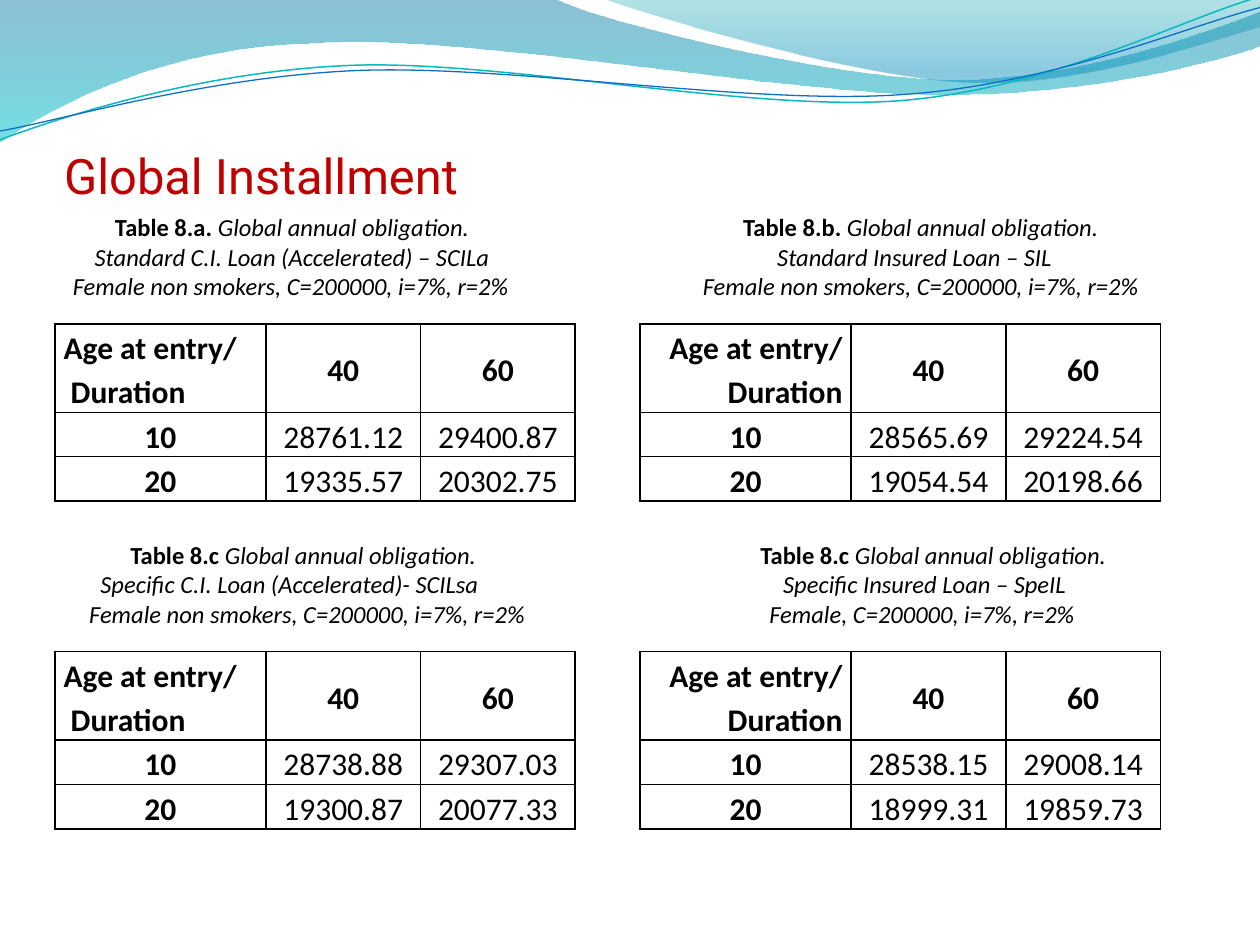
"""Builds the slide of global installment tables."""
import math
import pptx
import pptx.dml.color
import pptx.enum.text
import pptx.oxml
import pptx.oxml.ns
import pptx.util

ALIGN = pptx.enum.text.PP_ALIGN
ANCHOR = pptx.enum.text.MSO_ANCHOR
SPACE = pptx.oxml.ns.nsdecls("a")
BLACK = "000000"

WAVES = [
    ((-0.1, -0.1, 100.2, 11.4), (0, 0),
     [(44, -0.1), (47.6, 1.7, 66.4, 6.3, 75.8, 6.3),
      (85.3, 6.3, 95.8, 2.6, 100, 0.9), (100.1, 3.6),
      (98.3, 4.4, 87, 7.6, 74.6, 7.5), (62.2, 7.5, 38.2, 2.8, 25.7, 3.4),
      (12.9, 3.6, 4.6, 8.3, -0.1, 11.3), (0, 0)],
     [(0, "0074A1", 45), (1, "00C6CF", 55)]),
    ((47.9, -0.1, 52.1, 7), (47.9, -0.1),
     [(50.9, 1.1, 68.2, 6.2, 76.9, 6.5),
      (85.6, 6.9, 96.1, 3.2, 100, 2.1), (100, 0), (47.9, -0.1)],
     [(0, "00A1A9", 30), (0.8, "008BBF", 45)]),
]
LINES = [
    ((-0.2, 2.2, 100.2, 7.1), (0, 11.1),
     [(4.8, 9.3, 15.8, 5.7, 27.7, 5.2), (39.5, 4.7, 59.3, 8.9, 71.3, 8),
      (83.3, 7.1, 93.8, 1.5, 99.8, -0.2)], "0AB8BF", 0.85),
    ((-0.2, 3, 100.3, 5.8), (0, 10.4),
     [(4.7, 9.6, 16.4, 6.1, 28.3, 5.6), (40.3, 5.1, 59.7, 8.4, 71.7, 7.5),
      (83.6, 6.7, 94.1, 2.1, 100, 0.6)], "0F6FC6", 0.75),
]
THEME = "Global annual obligation."
TERMS = "C=200000, i=7%, r=2%"
NOTES = [
    ((3.5, 16.3, 94.5, 8.1), ("Table 8.a.", "Table 8.b."), [
        (23.2, THEME, 73.1, THEME),
        (23.2, "Standard C.I. Loan (Accelerated) – SCILa", 72.6, "Standard Insured Loan – SIL"),
        (23.1, f"Female non smokers, {TERMS}", 73.1, f"Female non smokers, {TERMS}")]),
    ((0, 42.3, 91, 8.1), ("Table 8.c", "Table 8.c"), [
        (24.1, THEME, 74.1, THEME),
        (23, "Specific C.I. Loan (Accelerated)- SCILsa", 73.4, "Specific Insured Loan – SpeIL"),
        (24.4, f"Female non smokers, {TERMS}", 73.2, f"Female, {TERMS}")]),
]
TABLES = [
    (0, 0, [("28761.12", "29400.87"), ("19335.57", "20302.75")]),
    (1, 0, [("28565.69", "29224.54"), ("19054.54", "20198.66")]),
    (1, 1, [("28538.15", "29008.14"), ("18999.31", "19859.73")]),
    (0, 1, [("28738.88", "29307.03"), ("19300.87", "20077.33")]),
]


def paint(code):
    """Return the colour of a hex string."""
    return pptx.dml.color.RGBColor.from_string(code)


class Deck:
    """Holds the style and the current slide on a grid of 100 by 75 squares."""

    face = "Calibri"
    head = "Roboto"

    def __init__(self):
        """Start a deck with one titled slide."""
        self.file = pptx.Presentation()
        self.file.slide_width = pptx.util.Inches(10)
        self.file.slide_height = pptx.util.Inches(7.5)
        self.unit = self.file.slide_width / 100
        self.slide = self.file.slides.add_slide(self.file.slide_layouts[5])

    def span(self, *sizes):
        """Turn grid squares into lengths."""
        return [pptx.util.Emu(round(size * self.unit)) for size in sizes]

    def style(self, para, size, align, bold=None):
        """Set the font and alignment of a paragraph."""
        para.alignment = align
        font = para.font
        font.name, font.size, font.bold = self.face, pptx.util.Pt(size), bold
        font.color.rgb = paint(BLACK)

    def title(self, text):
        """Fill the title placeholder and bring it to the front."""
        box = self.slide.shapes.title
        box.left, box.top, box.width, box.height = self.span(5.1, 8.4, 90, 12.5)
        frame = box.text_frame
        frame.text = text
        frame.vertical_anchor = ANCHOR.BOTTOM
        frame.margin_left, frame.margin_right, frame.margin_bottom = self.span(0, 0, 4.7)
        para = frame.paragraphs[0]
        self.style(para, 27.9, ALIGN.LEFT)
        para.font.name = self.head
        para.font.color.rgb = paint("C00000")
        self.slide.shapes._spTree.append(box._element)

    def curve(self, area, start, parts, turn=0):
        """Add an outline of straight and cubic parts, turned by some degrees."""
        left, top, width, height = area
        mid, rise = left + width / 2, top + height / 2
        cos, sin = math.cos(math.radians(-turn)), math.sin(math.radians(-turn))

        def spot(x, y):
            """Return the mark of one point within the area."""
            across, down = x - mid, y - rise
            x, y = self.span(across * cos - down * sin + width / 2,
                             across * sin + down * cos + height / 2)
            return f'<a:pt x="{x}" y="{y}"/>'

        pen = self.slide.shapes.build_freeform(*self.span(left, top))
        pen.add_line_segments([self.span(left + width, top + height)], close=False)
        shape = pen.convert_to_shape()
        shape.left, shape.top, shape.width, shape.height = self.span(*area)
        shape.rotation = turn
        shape.shadow.inherit = False
        body = f"<a:moveTo>{spot(*start)}</a:moveTo>"
        for part in parts:
            kind = "lnTo" if len(part) == 2 else "cubicBezTo"
            spots = "".join(spot(*pair) for pair in zip(part[::2], part[1::2]))
            body += f"<a:{kind}>{spots}</a:{kind}>"
        wide, high = self.span(width, height)
        path = next(shape._element.iter(pptx.oxml.ns.qn("a:path")))
        path.getparent().replace(path, pptx.oxml.parse_xml(
            f'<a:path {SPACE} w="{wide}" h="{high}">{body}</a:path>'))
        return shape

    def wave(self, area, start, parts, stops):
        """Add a wave with a see-through gradient running down."""
        shape = self.curve(area, start, parts)
        shape.line.fill.background()
        shape.fill.gradient()
        shape.fill.gradient_angle = 270
        for stop, (place, code, _) in zip(shape.fill.gradient_stops, stops):
            stop.position = place
            stop.color.rgb = paint(code)
        tints = shape._element.spPr.iter(pptx.oxml.ns.qn("a:srgbClr"))
        for tint, (_, _, share) in zip(tints, stops):
            alpha = tint.makeelement(pptx.oxml.ns.qn("a:alpha"), {"val": str(share * 1000)})
            tint.append(alpha)

    def line(self, area, start, parts, code, width):
        """Add a thin curved line."""
        shape = self.curve(area, start, parts, 357.3)
        shape.fill.background()
        shape.line.color.rgb = paint(code)
        shape.line.width = pptx.util.Pt(width)

    def note(self, area, labels, rows):
        """Add the captions of two tables, centred on tab stops."""
        box = self.slide.shapes.add_textbox(*self.span(*area))
        frame = box.text_frame
        frame.word_wrap = True
        frame.vertical_anchor = ANCHOR.MIDDLE
        for row, cols in enumerate(rows):
            para = frame.add_paragraph() if row else frame.paragraphs[0]
            self.style(para, 14, ALIGN.LEFT)
            stops = self.span(*(mid - area[0] - 1 for mid in cols[::2]))
            tabs = "".join(f'<a:tab pos="{stop}" algn="ctr"/>' for stop in stops)
            para._p.get_or_add_pPr().insert(0, pptx.oxml.parse_xml(
                f"<a:tabLst {SPACE}>{tabs}</a:tabLst>"))
            for label, text in zip(labels, cols[1::2]):
                if not row:
                    lead = para.add_run()
                    lead.text, lead.font.bold = f"\t{label}", True
                run = para.add_run()
                run.text, run.font.italic = ("\t" if row else " ") + text, True

    def cell(self, cell, text, align, bold, anchor):
        """Fill and frame one table cell."""
        cell.fill.background()
        cell.vertical_anchor = anchor
        cell.margin_left, cell.margin_right, cell.margin_top, cell.margin_bottom = self.span(
            0.7, 0.7, 0, 0)
        cell.text = text
        for para in cell.text_frame.paragraphs:
            self.style(para, 18, align, bold)
            para.line_spacing = 1.15
        for place, side in enumerate("LRTB"):
            edge = pptx.oxml.parse_xml(
                f'<a:ln{side} {SPACE} w="12700"><a:solidFill>'
                f'<a:srgbClr val="{BLACK}"/></a:solidFill></a:ln{side}>')
            cell._tc.tcPr.insert(place, edge)

    def table(self, left, top, values, align):
        """Add a table of installments by age and duration."""
        frame = self.slide.shapes.add_table(3, 3, *self.span(left, top, 41.3, 13.8))
        table = frame.table
        table.first_row = table.horz_banding = False
        for col, width in zip(table.columns, self.span(16.76, 12.27, 12.27)):
            col.width = width
        for row, height in zip(table.rows, self.span(7, 3.53, 3.53)):
            row.height = height
        texts = [("Age at entry/\n Duration", "40", "60"),
                 ("10", *values[0]), ("20", *values[1])]
        for r, row in enumerate(texts):
            for c, text in enumerate(row):
                first = r == c == 0
                self.cell(table.cell(r, c), text, align if first else ALIGN.CENTER,
                          r == 0 or c == 0, ANCHOR.TOP if first else ANCHOR.MIDDLE)


if __name__ == "__main__":
    deck = Deck()
    for wave in WAVES:
        deck.wave(*wave)
    for line in LINES:
        deck.line(*line)
    deck.title("Global Installment")
    for col, row, values in TABLES:
        deck.table(4.35 + 46.45 * col, 25.7 + 26 * row, values, (ALIGN.LEFT, ALIGN.RIGHT)[col])
    for note in NOTES:
        deck.note(*note)
    deck.file.save("out.pptx")
